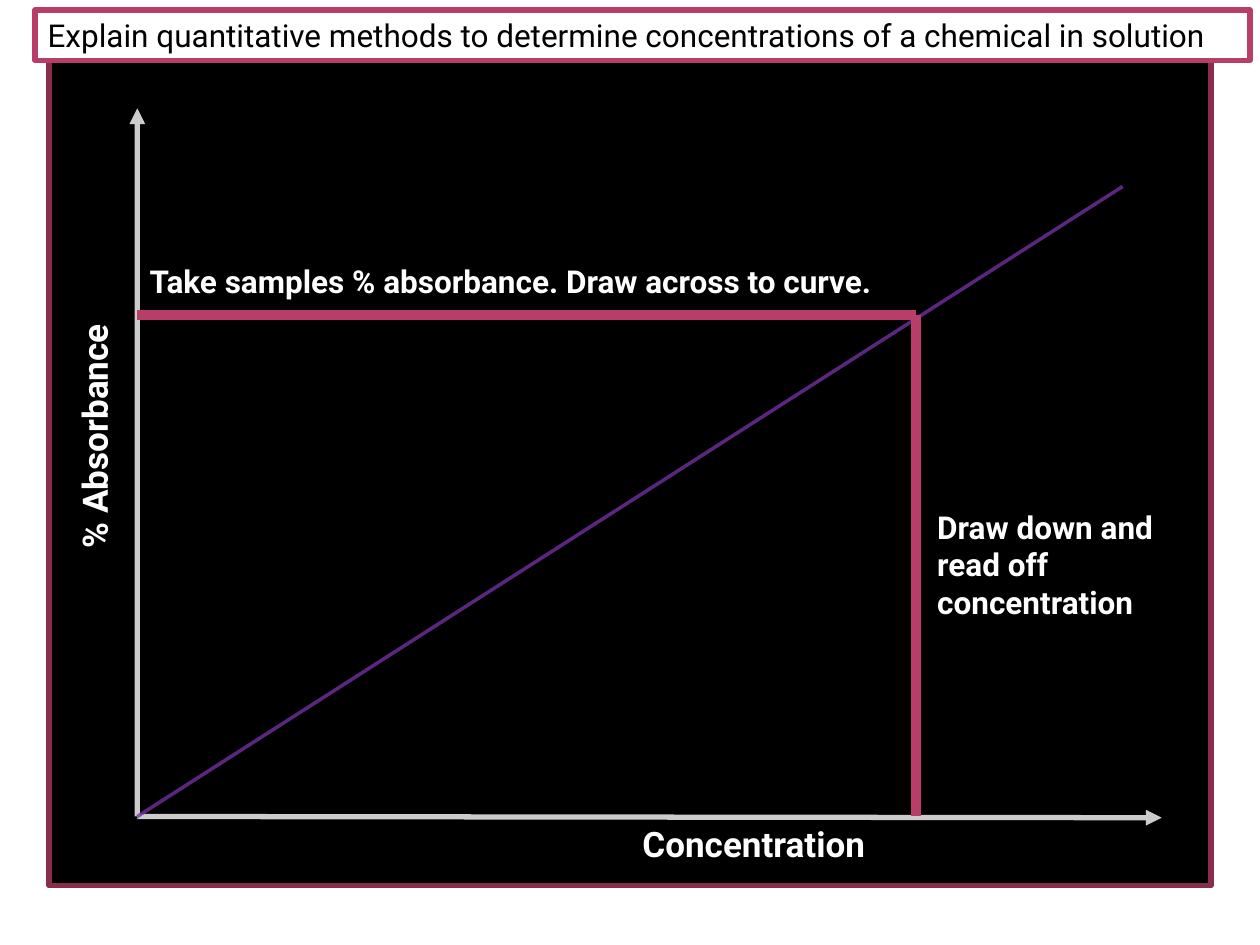
from lxml import etree
from pptx import Presentation
from pptx.dml.color import RGBColor
from pptx.enum.dml import MSO_LINE
from pptx.enum.shapes import MSO_CONNECTOR, MSO_SHAPE
from pptx.enum.text import MSO_ANCHOR, PP_ALIGN
from pptx.oxml.ns import qn
from pptx.util import Inches, Pt

STRAIGHT = MSO_CONNECTOR.STRAIGHT
RECTANGLE = MSO_SHAPE.RECTANGLE
SOLID = MSO_LINE.SOLID
LEFT = PP_ALIGN.LEFT
TOP = MSO_ANCHOR.TOP

BLACK = RGBColor(0x00, 0x00, 0x00)
WHITE = RGBColor(0xFF, 0xFF, 0xFF)
PLUM = RGBColor(0x88, 0x2D, 0x4D)
PINK = RGBColor(0xB8, 0x3D, 0x68)
PURPLE = RGBColor(0x70, 0x30, 0xA0)

FONT = "Roboto"
ORIGIN = (1.09, 6.48)
READING = (7.27, 2.5)


def write_text(shape, text, size=18, color=WHITE, bold=True):
    frame = shape.text_frame
    frame.word_wrap = True
    frame.vertical_anchor = TOP
    para = frame.paragraphs[0]
    para.alignment = LEFT
    span = para.add_run()
    span.text = text
    span.font.name = FONT
    span.font.size = Pt(size)
    span.font.color.rgb = color
    span.font.bold = bold


def add_label(page, text, left, top, width, height, rotation=0, **text_format):
    box = page.shapes.add_textbox(
        Inches(left), Inches(top), Inches(width), Inches(height))
    box.rotation = rotation
    write_text(box, text, **text_format)


def add_panel(page, left, top, width, height, fill, border):
    panel = page.shapes.add_shape(
        RECTANGLE, Inches(left), Inches(top), Inches(width), Inches(height))
    panel.shadow.inherit = False
    panel.fill.solid()
    panel.fill.fore_color.rgb = fill
    panel.line.color.rgb = border
    panel.line.width = Pt(3.15)
    return panel


def add_line(page, start, end, color, width, opacity=100, arrow=False):
    connector = page.shapes.add_connector(
        STRAIGHT, *(Inches(value) for value in (*start, *end)))
    line = connector.line
    line.color.rgb = color
    line.width = Pt(width)
    line.dash_style = SOLID
    properties = connector._element.spPr
    outline = properties.find(qn("a:ln"))
    if opacity < 100:
        tint = outline.find(".//" + qn("a:srgbClr"))
        etree.SubElement(tint, qn("a:alpha"), val=str(opacity * 1000))
    if arrow:
        etree.SubElement(outline, qn("a:tailEnd"), type="triangle")
    etree.SubElement(properties, qn("a:effectLst"))


def add_axes(page):
    for end in ((ORIGIN[0], 0.86), (9.22, 6.49)):
        add_line(page, ORIGIN, end, WHITE, 3, opacity=80, arrow=True)
    add_label(page, "Concentration", 5, 6.48, 3.98, 0.44, size=20)
    add_label(page, "% Absorbance", -1.24, 2.24, 3.98, 0.44,
              rotation=270, size=20)


def add_reading(page):
    """Draw the calibration line and the path from absorbance to concentration."""
    add_line(page, ORIGIN, (8.91, 1.48), PURPLE, 2, opacity=80)
    for axis_point in ((ORIGIN[0], READING[1]), (READING[0], ORIGIN[1])):
        add_line(page, axis_point, READING, PINK, 5.25)
    add_label(page, "Take samples % absorbance. Draw across to curve.",
              1.09, 2.03, 6.64, 0.4)
    add_label(page, "Draw down and read off concentration",
              7.34, 3.98, 2.03, 1.01)


def main():
    deck = Presentation()
    deck.slide_width, deck.slide_height = Inches(10), Inches(7.5)
    page = deck.slides.add_slide(deck.slide_layouts[6])
    add_panel(page, 0.39, 0.39, 9.22, 6.64, BLACK, PLUM)
    add_axes(page)
    add_reading(page)
    title = add_panel(page, 0.28, 0.08, 9.64, 0.4, WHITE, PINK)
    write_text(title, "Explain quantitative methods to determine "
               "concentrations of a chemical in solution",
               color=BLACK, bold=False)
    deck.save("out.pptx")


if __name__ == "__main__":
    main()
